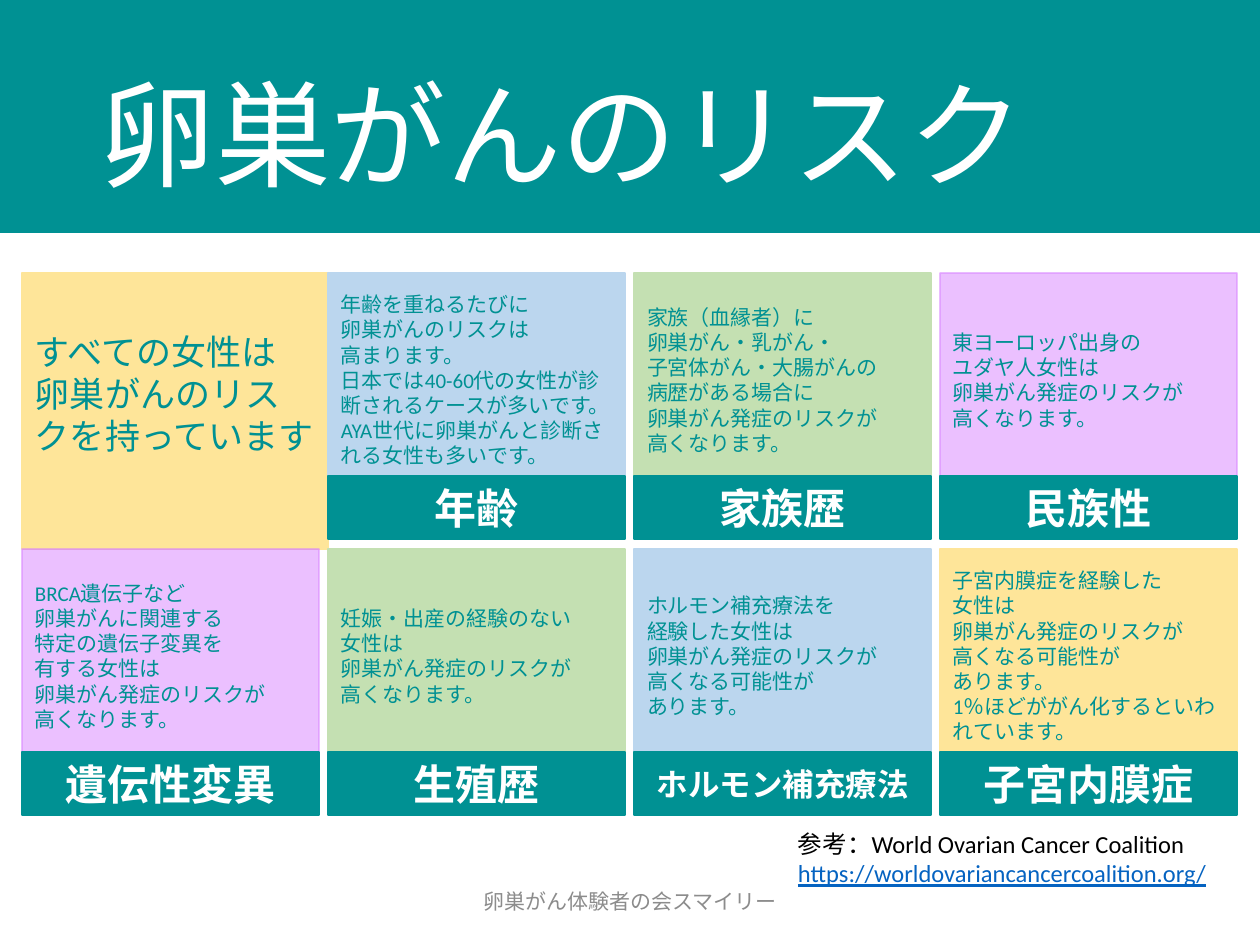
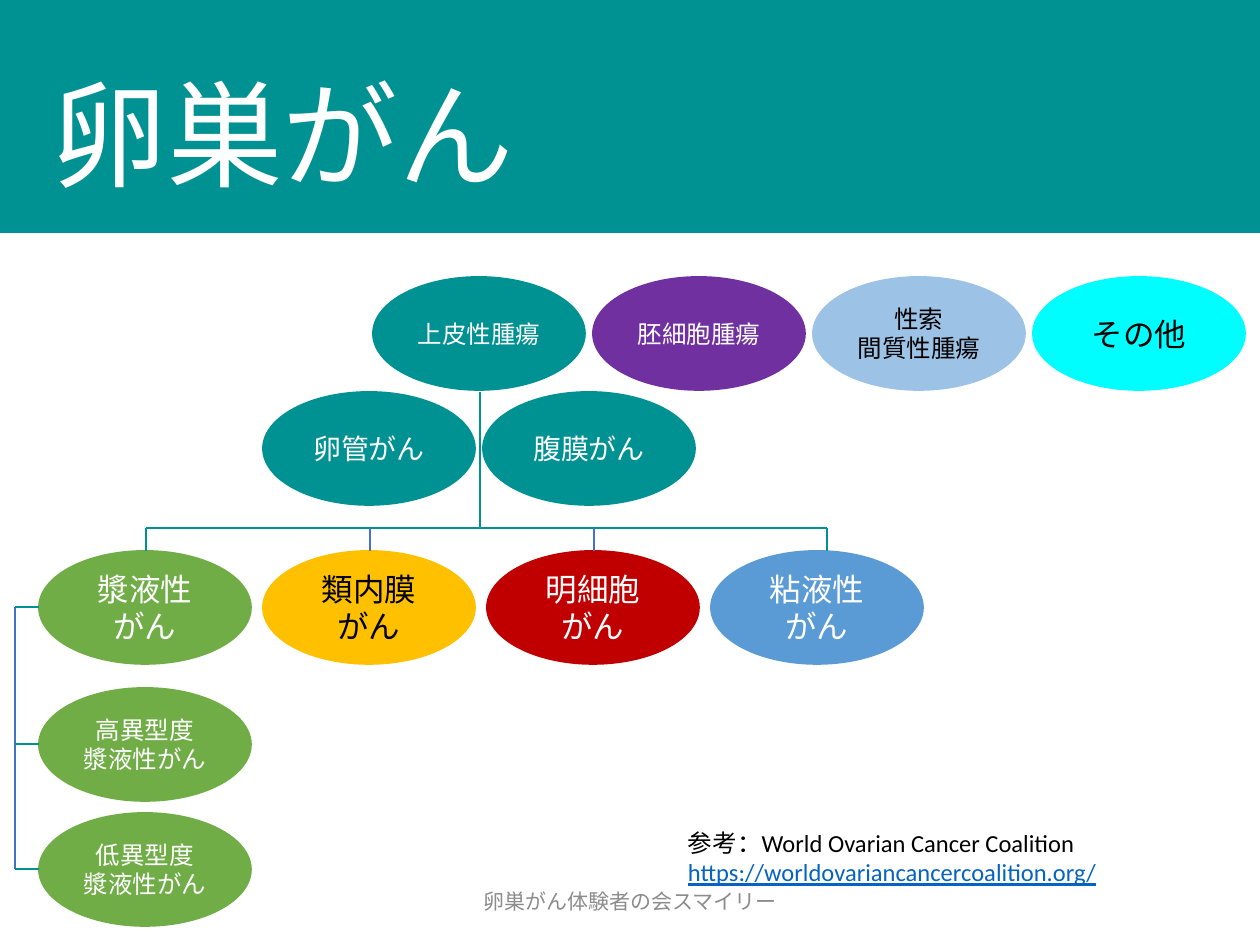
from collections import namedtuple
from copy import deepcopy

from lxml.etree import SubElement
from pptx import Presentation
from pptx.dml.color import RGBColor
from pptx.enum.shapes import MSO_CONNECTOR, MSO_SHAPE
from pptx.enum.text import MSO_ANCHOR, PP_ALIGN
from pptx.oxml.ns import qn
from pptx.util import Pt

RECTANGLE, ELLIPSE = MSO_SHAPE.RECTANGLE, MSO_SHAPE.OVAL
STRAIGHT = MSO_CONNECTOR.STRAIGHT
LEFT, CENTER = PP_ALIGN.LEFT, PP_ALIGN.CENTER
TOP, MIDDLE = MSO_ANCHOR.TOP, MSO_ANCHOR.MIDDLE

Box = namedtuple("Box", "left top width height")
Tile = namedtuple("Tile", "column row fill label label_size text")
Tumour = namedtuple("Tumour", "name fill color size")


class Theme:
    font = "Calibri"
    teal, white, black = "009193", "FFFFFF", "000000"
    yellow, blue, green, violet = "FEE599", "BBD6EE", "C4E0B2", "D883FF"
    purple, sky, cyan = "7030A0", "9CC2E5", "00FDFF"
    leaf, amber, red, azure = "70AD47", "FFC000", "C00000", "5B9BD5"
    line_blue, link, gray = "4472C4", "0563C1", "8C8C8C"
    translucent = {violet: "50000"}
    title, label, intro, large, medium, body, small = 66, 24, 20, 18, 16, 14, 12


# Shared pieces
def px(length):
    return round(length * 914400 / 126)


def style(size, color, **extra):
    return {"size": Pt(size), "name": Theme.font, "rgb": color, **extra}


def write(frame, lines, align=LEFT, anchor=MIDDLE, spacing=None, bottom=6):
    """Fill a text frame with (text, style) paragraphs."""
    settings = {"word_wrap": True, "vertical_anchor": anchor,
                "margin_left": px(13), "margin_right": px(13),
                "margin_top": px(6), "margin_bottom": px(bottom)}
    for name, value in settings.items():
        setattr(frame, name, value)
    for index, (text, look) in enumerate(lines):
        paragraph = frame.add_paragraph() if index else frame.paragraphs[0]
        paragraph.text = text
        paragraph.alignment = align
        paragraph.line_spacing = spacing
        for span in paragraph.runs:
            for name, value in look.items():
                if name == "rgb":
                    span.font.color.rgb = RGBColor.from_string(value)
                else:
                    setattr(span.font, name, value)
        # A line break takes the size of the text around it
        for line_break in paragraph._p.findall(qn("a:br")):
            line_break.append(deepcopy(paragraph.runs[0]._r.rPr))


def add_text(page, box, lines, **layout):
    text_box = page.shapes.add_textbox(*map(px, box))
    write(text_box.text_frame, lines, **layout)


def add_block(page, kind, box, fill, lines=(), **layout):
    block = page.shapes.add_shape(kind, *map(px, box))
    block.shadow.inherit = False
    for paint in (block.fill, block.line.fill):
        paint.solid()
        paint.fore_color.rgb = RGBColor.from_string(fill)
    block.line.width = Pt(1)
    if fill in Theme.translucent:
        for color in block._element.spPr.iter(qn("a:srgbClr")):
            SubElement(color, qn("a:alpha"), val=Theme.translucent[fill])
    write(block.text_frame, lines, **layout)


def add_line(page, start, end, color=Theme.teal):
    line = page.shapes.add_connector(STRAIGHT, *map(px, start + end))
    line.line.color.rgb = RGBColor.from_string(color)
    line.line.width = Pt(0.75)
    SubElement(line._element.spPr, qn("a:effectLst"))


def add_page(deck, title, title_box):
    """Blank page with the band, its title and the footer."""
    page = deck.slides.add_slide(deck.slide_layouts[6])
    add_block(page, RECTANGLE, Box(0, 0, 1260, 232), Theme.teal)
    add_text(page, title_box, [(title, style(Theme.title, Theme.white))], spacing=0.9)
    add_text(page, Box(417, 876, 426, 50),
             [("卵巣がん体験者の会スマイリー", style(Theme.small, Theme.gray))], align=CENTER)
    return page


def add_reference(page, box):
    add_text(page, box, [
        ("参考：World Ovarian Cancer Coalition", style(Theme.body, Theme.black)),
        ("https://worldovariancancercoalition.org/",
         style(Theme.body, Theme.link, underline=True)),
    ], anchor=TOP)


# Risk page: one tile per risk factor
INTRO = "すべての女性は\n卵巣がんのリスクを持っています"
TILES = [
    Tile(0, 1, Theme.violet, "遺伝性変異", Theme.label,
         "BRCA遺伝子など\n卵巣がんに関連する\n特定の遺伝子変異を\n有する女性は\n"
         "卵巣がん発症のリスクが\n高くなります。"),
    Tile(1, 1, Theme.green, "生殖歴", Theme.label,
         "妊娠・出産の経験のない\n女性は\n卵巣がん発症のリスクが\n高くなります。"),
    Tile(2, 1, Theme.blue, "ホルモン補充療法", Theme.large,
         "ホルモン補充療法を\n経験した女性は\n卵巣がん発症のリスクが\n"
         "高くなる可能性が\nあります。"),
    Tile(3, 1, Theme.yellow, "子宮内膜症", Theme.label,
         "子宮内膜症を経験した\n女性は\n卵巣がん発症のリスクが\n高くなる可能性が\n"
         "あります。\n1％ほどががん化するといわれています。"),
    Tile(1, 0, Theme.blue, "年齢", Theme.label,
         "年齢を重ねるたびに\n卵巣がんのリスクは\n高まります。\n"
         "日本では40-60代の女性が診断されるケースが多いです。\n"
         "AYA世代に卵巣がんと診断される女性も多いです。"),
    Tile(2, 0, Theme.green, "家族歴", Theme.label,
         "家族（血縁者）に\n卵巣がん・乳がん・\n子宮体がん・大腸がんの\n病歴がある場合に\n"
         "卵巣がん発症のリスクが\n高くなります。"),
    Tile(3, 0, Theme.violet, "民族性", Theme.label,
         "東ヨーロッパ出身の\nユダヤ人女性は\n卵巣がん発症のリスクが\n高くなります。"),
]


def add_tile(page, tile, box):
    add_block(page, RECTANGLE, box, tile.fill,
              [(tile.text, style(Theme.small, Theme.teal))])
    add_block(page, RECTANGLE, Box(box.left, box.top + 203, box.width, 63), Theme.teal,
              [(tile.label, style(tile.label_size, Theme.white, bold=True))], align=CENTER)


def add_risk_grid(page, box):
    step_x, step_y = box.width // 4, box.height // 2
    add_block(page, RECTANGLE, Box(box.left, box.top, step_x, step_y), Theme.yellow,
              [(INTRO, style(Theme.intro, Theme.teal))], bottom=40)
    for tile in TILES:
        add_tile(page, tile, Box(box.left + tile.column * step_x,
                                 box.top + tile.row * step_y, step_x - 9, 214))


def build_risk_page(deck):
    page = add_page(deck, "卵巣がんのリスク", Box(87, 50, 1086, 183))
    add_reference(page, Box(785, 823, 452, 72))
    add_risk_grid(page, Box(22, 273, 1224, 552))


# Tumour page: classification tree
ORIGINS = [
    Tumour("上皮性腫瘍", Theme.teal, Theme.white, Theme.body),
    Tumour("胚細胞腫瘍", Theme.purple, Theme.white, Theme.body),
    Tumour("性索\n間質性腫瘍", Theme.sky, Theme.black, Theme.body),
    Tumour("その他", Theme.cyan, Theme.black, Theme.large),
]
RELATED = [Tumour(name, Theme.teal, Theme.white, Theme.medium)
           for name in ("卵管がん", "腹膜がん")]
EPITHELIAL = [
    Tumour("漿液性がん", Theme.leaf, Theme.white, Theme.large),
    Tumour("類内膜がん", Theme.amber, Theme.black, Theme.large),
    Tumour("明細胞がん", Theme.red, Theme.white, Theme.large),
    Tumour("粘液性がん", Theme.azure, Theme.white, Theme.large),
]
SEROUS = [Tumour(name, Theme.leaf, Theme.white, Theme.body)
          for name in ("高異型度\n漿液性がん", "低異型度\n漿液性がん")]
OVAL_WIDTH, OVAL_HEIGHT = 212, 113


def add_ovals(page, tumours, left, top, step_x=0, step_y=0):
    for index, tumour in enumerate(tumours):
        box = Box(left + index * step_x, top + index * step_y, OVAL_WIDTH, OVAL_HEIGHT)
        add_block(page, ELLIPSE, box, tumour.fill,
                  [(tumour.name, style(tumour.size, tumour.color))], align=CENTER)


def add_tumour_tree(page, box):
    left, top = box.left + 24, box.top
    types_top, grades_top = top + 274, top + 411
    type_step, grade_step = 224, 125
    add_ovals(page, ORIGINS, left + 334, top, step_x=220)
    add_ovals(page, RELATED, left + 224, top + 115, step_x=220)
    add_ovals(page, EPITHELIAL, left, types_top, step_x=type_step)
    add_ovals(page, SEROUS, left, grades_top, step_y=grade_step)

    # Trunk, bus and drops to the epithelial types
    bus, trunk = types_top - 23, left + 441
    first, last = left + 107, left + 788
    add_line(page, (first, bus), (last, bus))
    add_line(page, (trunk, top + 115), (trunk, bus))
    drops = [(first, Theme.teal), (first + type_step, Theme.line_blue),
             (first + 2 * type_step, Theme.line_blue), (last, Theme.teal)]
    for x, color in drops:
        add_line(page, (x, bus), (x, types_top), color)

    # Bracket from the serous type to its grades
    levels = [y + OVAL_HEIGHT // 2
              for y in (types_top, grades_top, grades_top + grade_step)]
    add_line(page, (box.left, levels[0]), (box.left, levels[-1]), Theme.line_blue)
    for y in levels:
        add_line(page, (box.left, y), (left, y))


def build_tumour_page(deck):
    page = add_page(deck, "卵巣がん", Box(39, 50, 1206, 183))
    add_tumour_tree(page, Box(15, 277, 1230, 649))
    add_reference(page, Box(675, 822, 571, 72))


def main():
    deck = Presentation()
    deck.slide_width, deck.slide_height = px(1260), px(945)
    build_risk_page(deck)
    build_tumour_page(deck)
    deck.save("out.pptx")


if __name__ == "__main__":
    main()
